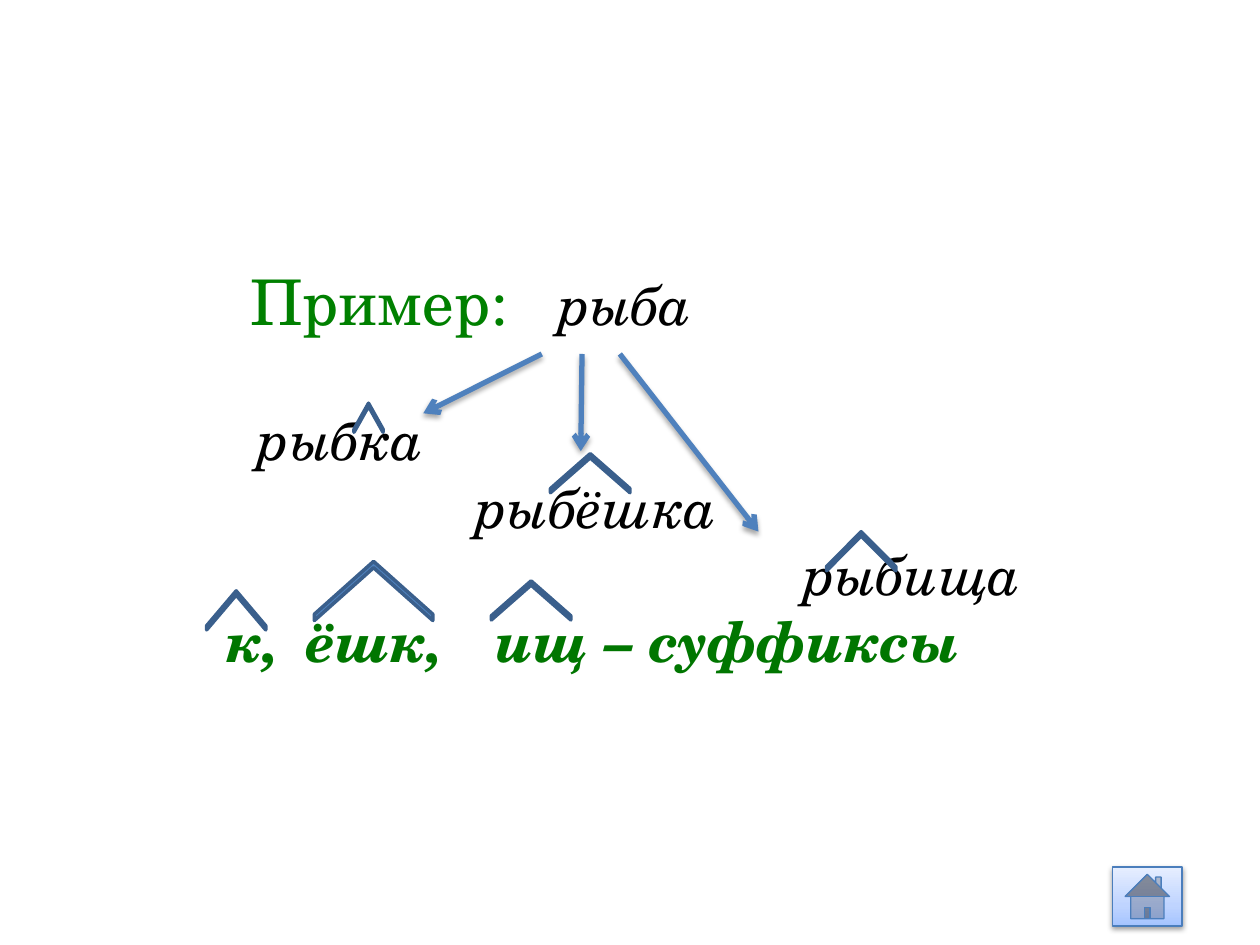
from pptx import Presentation
from pptx.dml.color import RGBColor
from pptx.enum.shapes import MSO_CONNECTOR, MSO_SHAPE
from pptx.enum.text import MSO_AUTO_SIZE
from pptx.oxml import parse_xml
from pptx.oxml.ns import nsdecls, qn
from pptx.util import Pt

FONT = "TeX Gyre Schola"
COLORS = {
    "heading": "008000", "word": "000000", "suffix": "007600",
    "accent": "4F81BD", "roof_line": "3A5F8C", "button_line": "4B7EBC",
}
BUTTON_GRADIENT = [(0, "A4C4FF"), (35, "BFD4FF"), (100, "E6EEFF")]

# Each line: first-line indent, space before, tab stops, spans (text, size, colour, bold, italic)
LINES = [
    (40, 0, [218], [("Пример:\t", 36, "heading", False, False),
                    ("рыба", 32, "word", False, True)]),
    (44.5, 38.5, [], [("рыбка", 32, "word", False, True)]),
    (169, 0, [], [("рыбёшка", 32, "word", False, True)]),
    (356, 0, [], [("рыбища", 32, "word", False, True)]),
    (26.7, 0, [83.5, 181.5],
     [("к,\tёшк,\tищ – суффиксы", 32, "suffix", True, True)]),
]
TEXT_BOX = (95.8, 146.2, 500.4, 244.8)

ARROW_TOP = 202.3
ARROWS = [(309.6, 241.9, 236.2), (332.6, 331.9, 257.8), (354.2, 433.4, 303.8)]  # start x, end x, end y

# Suffix roofs as seen: centre x, centre y, span, rise
ROOFS = [
    (337.3, 270.4, 45.4, 22.3), (492.1, 315, 39.6, 22.3), (210.6, 238.7, 16.6, 16.6),
    (135, 348.8, 33.8, 22.3), (213.5, 337.7, 67.7, 33.8), (303.5, 343.1, 45.4, 22.3),
]
HOME_BUTTON = (635.8, 495.4, 39.6, 33.8)


def rgb(name):
    return RGBColor.from_string(COLORS[name])


def points(*lengths):
    return [Pt(length) for length in lengths]


def shadow_effect(opacity, blur=3.1, distance=1.8):
    return parse_xml(
        f'<a:effectLst {nsdecls("a")}><a:outerShdw blurRad="{Pt(blur)}" dist="{Pt(distance)}" '
        f'dir="5400000" rotWithShape="0"><a:srgbClr val="000000">'
        f'<a:alpha val="{opacity * 1000}"/></a:srgbClr></a:outerShdw></a:effectLst>')


def add_words(page):
    box = page.shapes.add_textbox(*points(*TEXT_BOX))
    frame = box.text_frame
    frame.word_wrap = True
    frame.auto_size = MSO_AUTO_SIZE.SHAPE_TO_FIT_TEXT
    for index, (indent, before, tabs, spans) in enumerate(LINES):
        para = frame.add_paragraph() if index else frame.paragraphs[0]
        properties = para._p.get_or_add_pPr()
        properties.set("marL", "0")
        properties.set("indent", str(Pt(indent)))
        if tabs:
            stops = "".join(f'<a:tab pos="{Pt(tab)}" algn="l"/>' for tab in tabs)
            properties.append(parse_xml(f'<a:tabLst {nsdecls("a")}>{stops}</a:tabLst>'))
        para.space_before = Pt(before)
        for text, size, color, bold, italic in spans:
            span = para.add_run()
            span.text = text
            font = span.font
            font.size, font.bold, font.italic = Pt(size), bold, italic
            font.color.rgb = rgb(color)
            span._r.get_or_add_rPr().append(shadow_effect(40))
            font.name = FONT


def add_arrow(page, start_x, end_x, end_y):
    arrow = page.shapes.add_connector(
        MSO_CONNECTOR.STRAIGHT, *points(start_x, ARROW_TOP, end_x, end_y))
    arrow.line.color.rgb = rgb("accent")
    arrow.line.width = Pt(3)
    arrow.line._get_or_add_ln().append(
        parse_xml(f'<a:tailEnd {nsdecls("a")} type="arrow"/>'))
    arrow._element.spPr.append(shadow_effect(35))


def add_roof(page, center_x, center_y, span, rise):
    """Add a chevron turned to point up; its unturned box is rise wide and span high."""
    roof = page.shapes.add_shape(
        MSO_SHAPE.CHEVRON,
        *points(center_x - rise / 2, center_y - span / 2, rise, span))
    roof.rotation = 270
    roof.adjustments[0] = 0.893
    roof.shadow.inherit = False
    roof.fill.solid()
    roof.fill.fore_color.rgb = rgb("accent")
    roof.line.color.rgb = rgb("roof_line")
    roof.line.width = Pt(2)


def add_home_button(page):
    button = page.shapes.add_shape(MSO_SHAPE.ACTION_BUTTON_HOME, *points(*HOME_BUTTON))
    stops = "".join(f'<a:gs pos="{place * 1000}"><a:srgbClr val="{color}"/></a:gs>'
                    for place, color in BUTTON_GRADIENT)
    properties = button._element.spPr
    properties.find(qn("a:prstGeom")).addnext(parse_xml(
        f'<a:gradFill {nsdecls("a")} rotWithShape="1"><a:gsLst>{stops}</a:gsLst>'
        f'<a:lin ang="16200000" scaled="0"/></a:gradFill>'))
    button.line.color.rgb = rgb("button_line")
    button.line.width = Pt(0.75)
    properties.append(shadow_effect(38, distance=1.6))


def main():
    deck = Presentation()
    deck.slide_width, deck.slide_height = Pt(720), Pt(540)
    page = deck.slides.add_slide(deck.slide_layouts[6])
    add_words(page)
    for arrow in ARROWS:
        add_arrow(page, *arrow)
    for roof in ROOFS:
        add_roof(page, *roof)
    add_home_button(page)
    deck.save("out.pptx")


if __name__ == "__main__":
    main()
